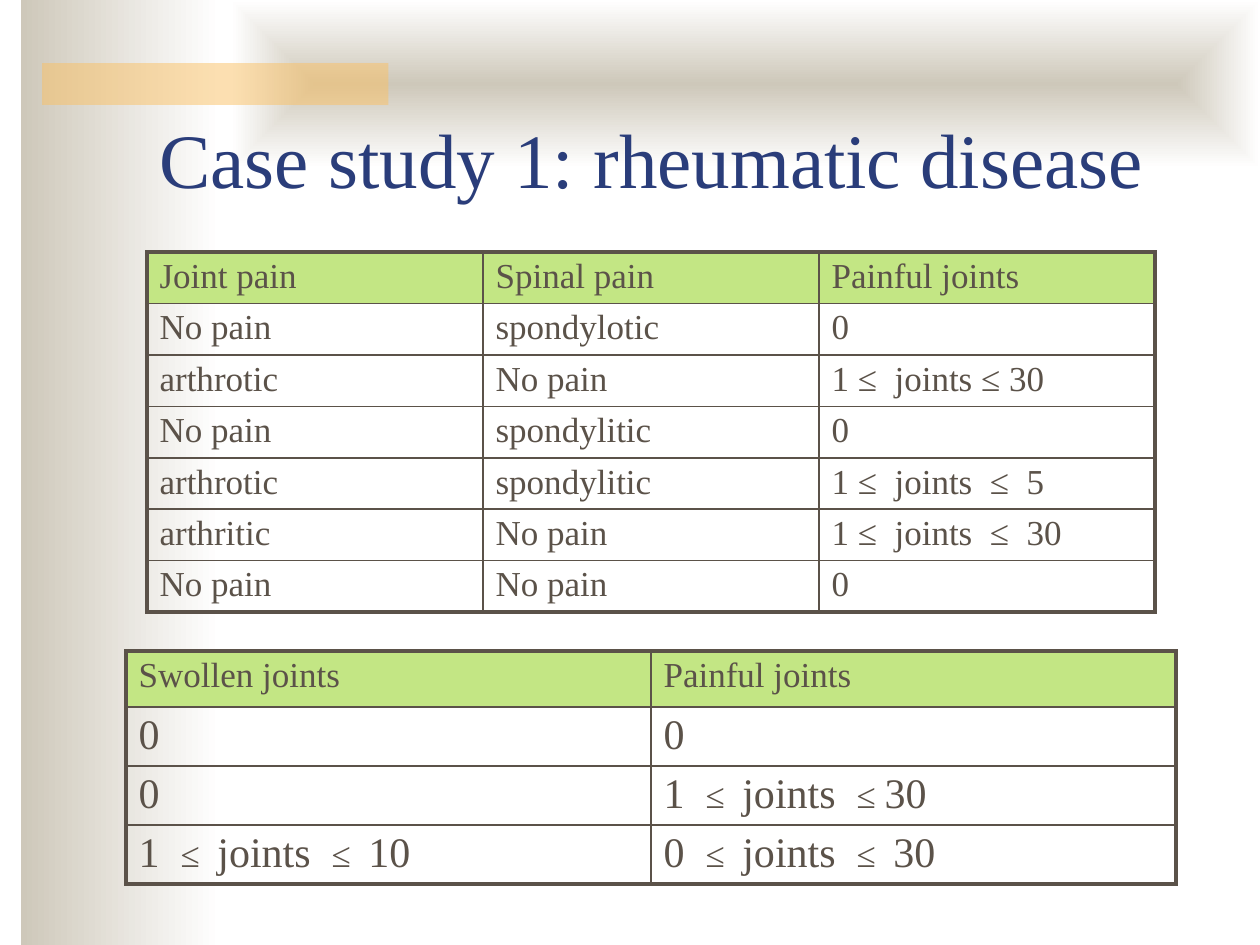
from lxml.etree import SubElement
from pptx import Presentation
from pptx.dml.color import RGBColor
from pptx.enum.shapes import MSO_SHAPE
from pptx.enum.text import MSO_ANCHOR, PP_ALIGN
from pptx.oxml.ns import qn
from pptx.util import Inches, Pt

FONT = "Times New Roman"
INK = "5B5249"
SAND = "CEC8BA"


def color(hex_code):
    return RGBColor.from_string(hex_code)


def draw_border(cell, side, points):
    properties = cell._tc.get_or_add_tcPr()
    line = SubElement(properties, qn(f"a:ln{side}"), w=str(Pt(points)))
    solid = SubElement(line, qn("a:solidFill"))
    SubElement(solid, qn("a:srgbClr"), val=INK)


prs = Presentation()
prs.slide_width, prs.slide_height = Inches(10), Inches(7.5)
unit = prs.slide_width / 60
slide = prs.slides.add_slide(prs.slide_layouts[5])

bands = []
for box in [(1, 0, 9.5, 45), (11, 0, 49, 8), (2, 3, 16.5, 2)]:
    band = slide.shapes.add_shape(MSO_SHAPE.RECTANGLE, *[round(n * unit) for n in box])
    band.shadow.inherit = False
    band.line.fill.background()
    bands.append(band)
side_band, top_band, accent = bands

for band in (side_band, top_band):
    band.fill.gradient()
    band.fill.gradient_angle = 0
    for stop, shade in zip(band.fill.gradient_stops, (SAND, "FFFFFF")):
        stop.color.rgb = color(shade)

linear = top_band._element.spPr.find(".//" + qn("a:lin"))
radial = SubElement(linear.getparent(), qn("a:path"), path="shape")
SubElement(radial, qn("a:fillToRect"), l="50000", t="50000", r="50000", b="50000")
linear.getparent().replace(linear, radial)

accent.fill.solid()
accent.fill.fore_color.rgb = color("FAC164")
accent_color = accent._element.spPr.find(".//" + qn("a:srgbClr"))
SubElement(accent_color, qn("a:alpha"), val="50000")

title = slide.shapes.title
title.left, title.top, title.width, title.height = [
    round(n * unit) for n in (7, 2.5, 51, 7.5)]
title.text_frame.text = "Case study 1: rheumatic disease"
title.text_frame.vertical_anchor = MSO_ANCHOR.BOTTOM
heading = title.text_frame.paragraphs[0]
heading.alignment = PP_ALIGN.LEFT
heading.font.name = FONT
heading.font.size = Pt(44)
heading.font.color.rgb = color("2A3D7A")
slide.shapes._spTree.append(title._element)

pain_rows = [
    ("Joint pain", "Spinal pain", "Painful joints"),
    ("No pain", "spondylotic", "0"),
    ("arthrotic", "No pain", "1 ≤  joints ≤ 30"),
    ("No pain", "spondylitic", "0"),
    ("arthrotic", "spondylitic", "1 ≤  joints  ≤  5"),
    ("arthritic", "No pain", "1 ≤  joints  ≤  30"),
    ("No pain", "No pain", "0"),
]
swelling_rows = [
    ("Swollen joints", "Painful joints"),
    ("0", "0"),
    ("0", "1  |≤  |joints  |≤ |30"),
    ("1  |≤  |joints  |≤  |10", "0  |≤  |joints  |≤  |30"),
]

for rows, box, header_height, row_height, body_size in [
    (pain_rows, (7, 12, 48), 2.45, 2.45, 20),
    (swelling_rows, (6, 31, 50), 2.67, 2.81, 24),
]:
    last_row, last_column = len(rows) - 1, len(rows[0]) - 1
    heights = [header_height] + [row_height] * last_row
    left, top, width, height = [round(n * unit) for n in (*box, sum(heights))]
    table = slide.shapes.add_table(
        last_row + 1, last_column + 1, left, top, width, height).table
    table.first_row = table.horz_banding = False
    for r, texts in enumerate(rows):
        table.rows[r].height = round(heights[r] * unit)
        for c, text in enumerate(texts):
            cell = table.cell(r, c)
            cell.margin_top = cell.margin_bottom = Inches(0.04)
            outer_sides = {"L": c == 0, "R": c == last_column,
                           "T": r == 0, "B": r == last_row}
            for side, is_outer in outer_sides.items():
                draw_border(cell, side, 2.25 if is_outer else 1)
            if r == 0:
                cell.fill.solid()
                cell.fill.fore_color.rgb = color("C3E684")
            else:
                cell.fill.background()
            for part in text.split("|"):
                run = cell.text_frame.paragraphs[0].add_run()
                run.text = part
                run.font.name = FONT
                run.font.size = Pt(20 if r == 0 or "≤" in part else body_size)
                run.font.color.rgb = color(INK)

prs.save("out.pptx")
